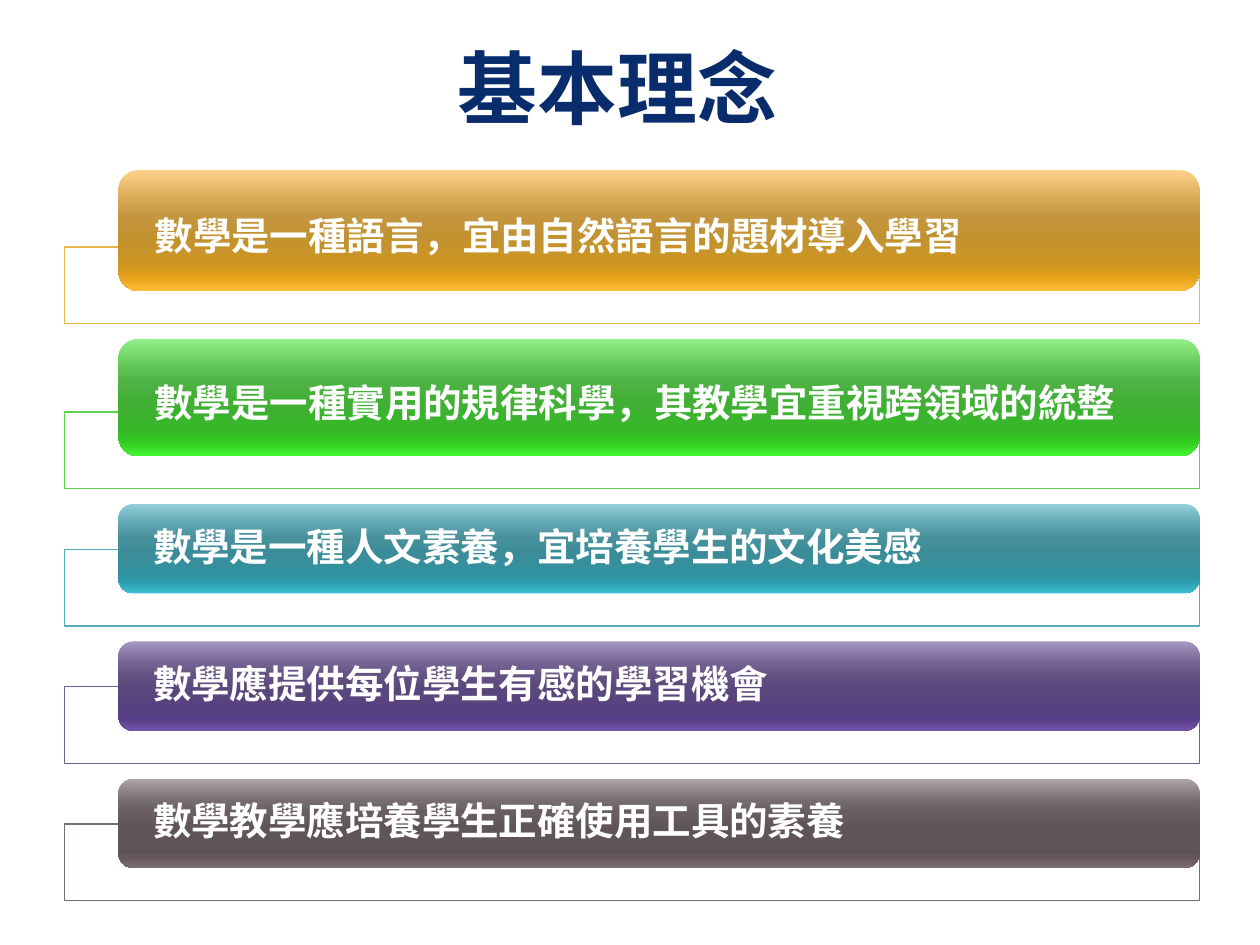
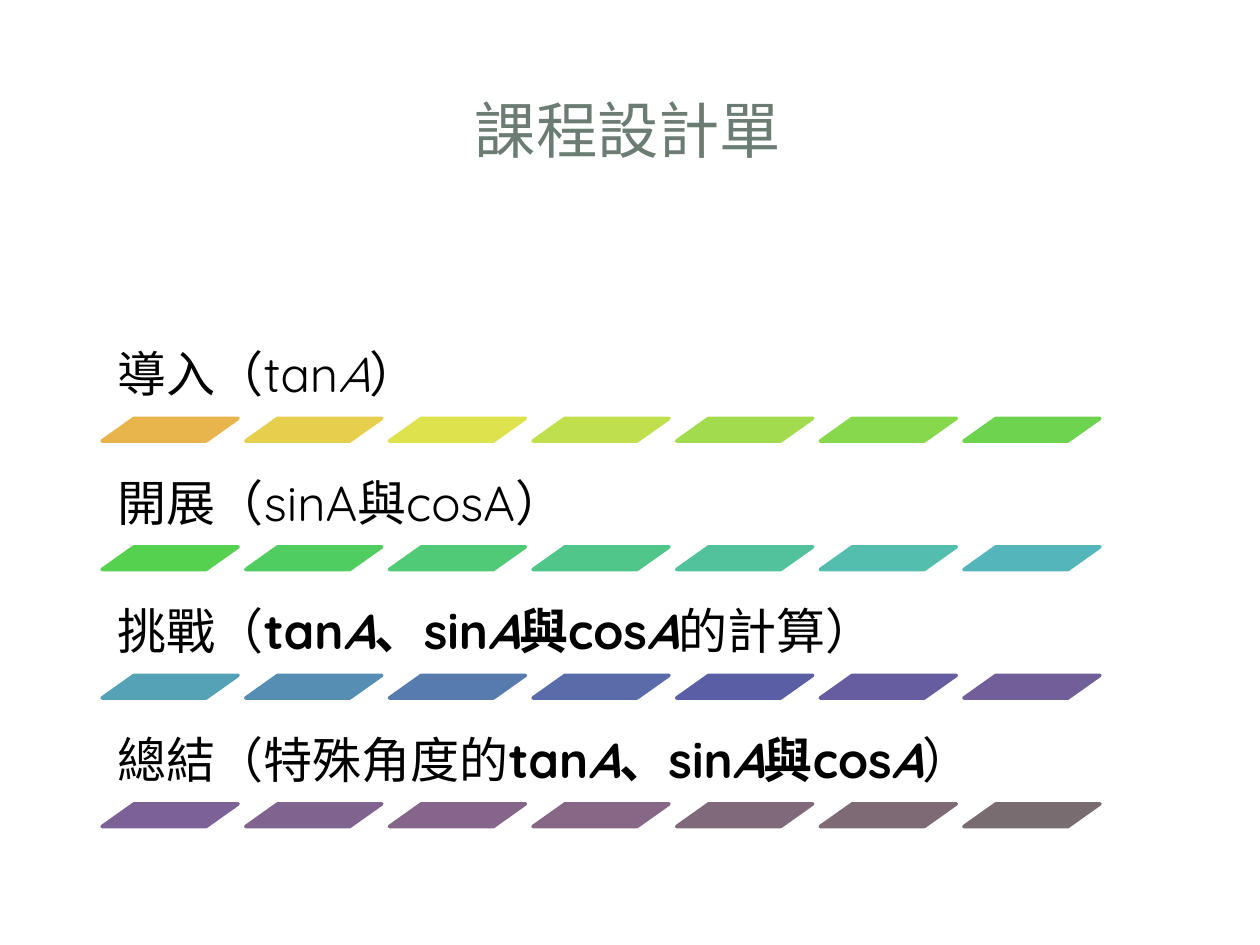
import pptx
import pptx.util
import pptx.oxml
import pptx.oxml.ns
import pptx.dml.color
import pptx.enum.shapes
import pptx.enum.text
from dataclasses import dataclass

Inches = pptx.util.Inches
Pt = pptx.util.Pt
Color = pptx.dml.color.RGBColor.from_string
Kind = pptx.enum.shapes.MSO_SHAPE
Align = pptx.enum.text.PP_ALIGN
Anchor = pptx.enum.text.MSO_ANCHOR


@dataclass
class Theme:
    white: str = "FFFFFF"
    black: str = "000000"
    navy: str = "092C6C"
    sage: str = "6B7D72"
    cjk: str = "Noto Sans CJK SC"
    plain: str = "Arial"
    round: str = "Quicksand"
    big: float = 45.6
    head: float = 35
    bar: float = 22
    step: float = 28


theme = Theme()


def style(run, font, size, color, bold=False, slant=False):
    run.font.name = font
    run.font.size = Pt(size)
    run.font.color.rgb = Color(color)
    run.font.bold = bold
    run.font.italic = slant
    if font == theme.cjk:
        east = pptx.oxml.parse_xml(
            f'<a:ea {pptx.oxml.ns.nsdecls("a")} typeface="{font}"/>')
        run.font._element.find(pptx.oxml.ns.qn("a:latin")).addnext(east)


def draw(slide, kind, box, fill, line=None, width=0.75):
    shape = slide.shapes.add_shape(kind, *map(Inches, box))
    shape.shadow.inherit = False
    if isinstance(fill, str):
        shape.fill.solid()
        shape.fill.fore_color.rgb = Color(fill)
    else:
        shape.fill.gradient()
        shape.fill.gradient_angle = 270
        stops = shape.fill._fill._gradFill.find(pptx.oxml.ns.qn("a:gsLst"))
        for stop in list(stops):
            stops.remove(stop)
        for place, color in zip((0, 25, 38, 55, 80, 88, 100), fill):
            stops.append(pptx.oxml.parse_xml(
                f'<a:gs {pptx.oxml.ns.nsdecls("a")} pos="{place * 1000}">'
                f'<a:srgbClr val="{color}"/></a:gs>'))
    if line:
        shape.line.color.rgb = Color(line)
        shape.line.width = Pt(width)
    else:
        shape.line.fill.background()
    return shape


deck = pptx.Presentation()
deck.slide_width = Inches(10)
deck.slide_height = Inches(7.5)

heads = [
    ("基本理念", (0.94, 0.25, 7.92, 0.88), theme.cjk, theme.big, theme.navy, True),
    ("課程設計單", (0.47, 0.45, 9.03, 1.14), theme.plain, theme.head, theme.sage, False),
]
slides = []
for text, box, font, size, color, bold in heads:
    slide = deck.slides.add_slide(deck.slide_layouts[5])
    title = slide.shapes.title
    title.left, title.top, title.width, title.height = map(Inches, box)
    frame = title.text_frame
    frame.text = text
    frame.auto_size = pptx.enum.text.MSO_AUTO_SIZE.NONE
    frame.vertical_anchor = Anchor.MIDDLE
    frame.paragraphs[0].alignment = Align.CENTER
    style(frame.paragraphs[0].runs[0], font, size, color, bold)
    slides.append(slide)
ideas, plan = slides

bars = [
    ("數學是一種語言，宜由自然語言的題材導入學習", 0.96, Pt(32), "E8B54D",
     "FFD08A D7A952 C49640 C29230 CF9621 E4A119 FFBD3B"),
    ("數學是一種實用的規律科學，其教學宜重視跨領域的統整", 0.93, Pt(32), "5CD24F",
     "91F08A 5EC354 4DB243 40AF34 35BA26 32CC20 44F531"),
    ("數學是一種人文素養，宜培養學生的文化美感", 0.71, 0.9, "55ABB8",
     "91CFDB 59A1AC 48919C 3A8C98 3092A0 2D9EAF 3EC0D3"),
    ("數學應提供每位學生有感的學習機會", 0.71, 0.9, "745F99",
     "A69AC3 726191 635282 59467C 574081 5B408B 7253AA"),
    ("數學教學應培養學生正確使用工具的素養", 0.71, 0.9, "786C71",
     "ACA4A8 766C70 685E62 5F5458 5F5257 65555C 7E6C73"),
]
top = 1.35
for text, high, space, edge, shades in bars:
    draw(ideas, Kind.RECTANGLE, (0.51, top + high - 0.35, 9.01, 0.61), theme.white, edge)
    bar = draw(ideas, Kind.ROUNDED_RECTANGLE, (0.94, top, 8.58, high), shades.split())
    frame = bar.text_frame
    frame.text = text
    frame.word_wrap = True
    frame.vertical_anchor = Anchor.MIDDLE
    frame.margin_left = frame.margin_right = Inches(0.24)
    frame.margin_top = frame.margin_bottom = 0
    line = frame.paragraphs[0]
    line.alignment = Align.LEFT
    line.line_spacing = space
    style(line.runs[0], theme.cjk, theme.bar, theme.white, True)
    top += high + 0.38

trio = [("tan", "b"), ("A", "bi"), ("、sin", "b"), ("A", "bi"), ("與cos", "b"), ("A", "bi")]
steps = [
    ([("導入（tan", ""), ("A", "i"), ("）", "")],
     "E8B54D E5CF4D DDE24D BFDF4D A3DB4E 88D84E 6ED44F"),
    ([("開展（sinA與cosA）", "")],
     "56D14F 50CD60 50CA76 51C68A 52C29D 53BEAE 54B6BA"),
    ([("挑戰（", ""), *trio, ("的計算）", "")],
     "55A1B6 568DB2 587BAD 596CA9 5A5EA5 655D9F 715F9A"),
    ([("總結（特殊角度的", ""), *trio, ("）", "")],
     "7B6195 816390 86658B 866785 81697C 7D6A75 786C71"),
]
for row, (parts, shades) in enumerate(steps):
    top = 2.58 + 1.02 * row
    label = plan.shapes.add_textbox(*map(Inches, (0.81, top, 8.09, 0.74)))
    frame = label.text_frame
    frame.word_wrap = True
    frame.vertical_anchor = Anchor.BOTTOM
    frame.margin_left = frame.margin_right = Inches(0.12)
    frame.margin_top = frame.margin_bottom = Inches(0.12)
    line = frame.paragraphs[0]
    line.line_spacing = 0.9
    for text, look in parts:
        run = line.add_run()
        run.text = text
        style(run, theme.round, theme.step, theme.black, "b" in look, "i" in look)
    for col, shade in enumerate(shades.split()):
        tile = draw(plan, Kind.PARALLELOGRAM,
                    (0.81 + 1.14 * col, top + 0.74, 1.08, 0.18), shade, shade, 2)
        tile.adjustments[0] = 1.41

deck.save("out.pptx")
